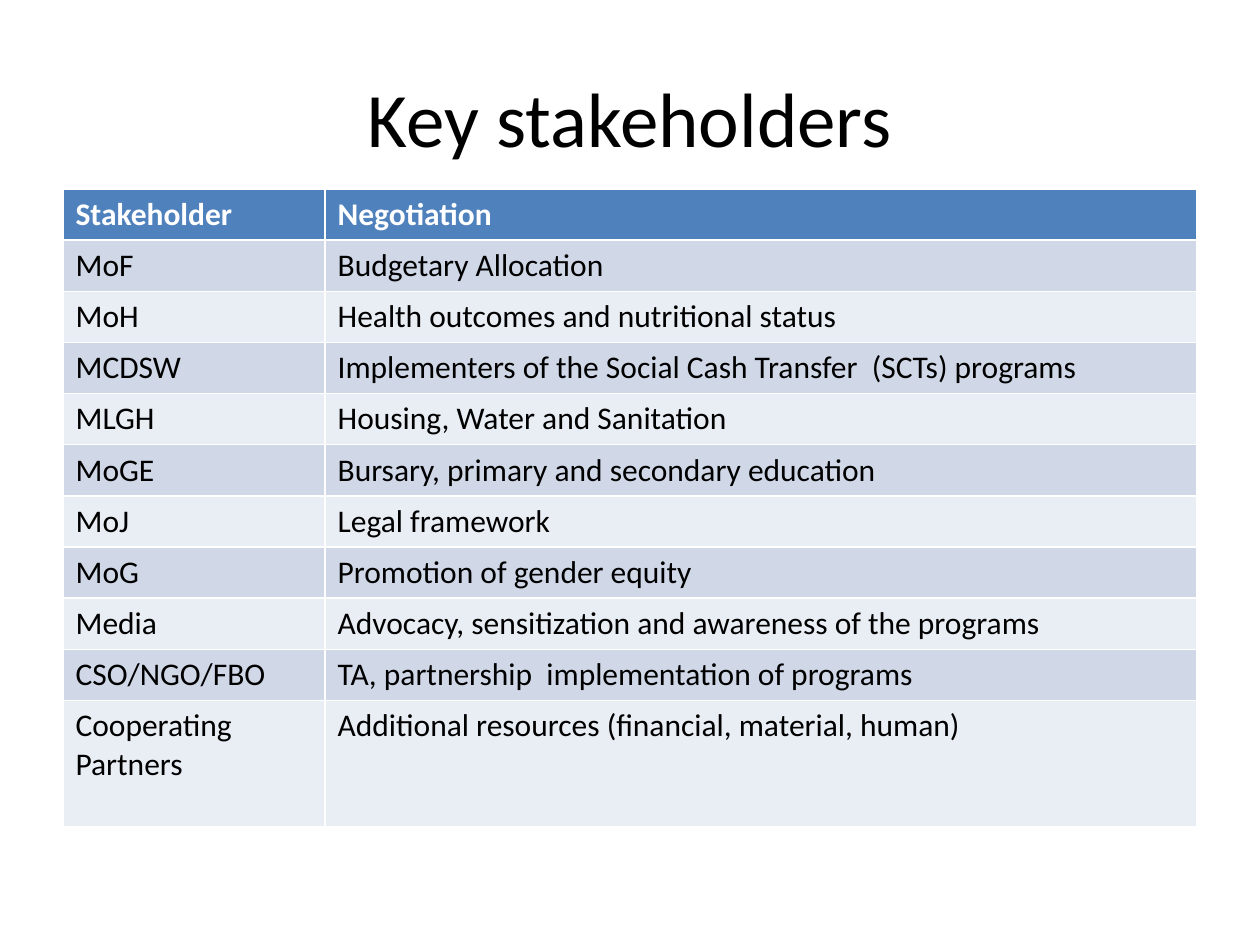
from pptx import Presentation
from pptx.dml.color import RGBColor
from pptx.enum.text import MSO_ANCHOR, PP_ALIGN
from pptx.util import Inches, Pt

CENTER, MIDDLE = PP_ALIGN.CENTER, MSO_ANCHOR.MIDDLE
WHITE = RGBColor(0xFF, 0xFF, 0xFF)
BLACK = RGBColor(0x00, 0x00, 0x00)
HEADER = RGBColor(0x4F, 0x81, 0xBD)
BANDS = [RGBColor(0xE9, 0xED, 0xF4), RGBColor(0xD0, 0xD8, 0xE8)]
FONT = "Calibri"

ROWS = [
    ("Stakeholder", "Negotiation"),
    ("MoF", "Budgetary Allocation"),
    ("MoH", "Health outcomes and nutritional status"),
    ("MCDSW", "Implementers of the Social Cash Transfer  (SCTs) programs"),
    ("MLGH", "Housing, Water and Sanitation"),
    ("MoGE", "Bursary, primary and secondary education"),
    ("MoJ", "Legal framework"),
    ("MoG", "Promotion of gender equity"),
    ("Media", "Advocacy, sensitization and awareness of the programs"),
    ("CSO/NGO/FBO", "TA, partnership  implementation of programs"),
    ("Cooperating Partners", "Additional resources (financial, material, human)"),
]


def add_run(p, text, size, color, bold=False):
    r = p.add_run()
    r.text = text
    r.font.name, r.font.size, r.font.bold = FONT, Pt(size), bold
    r.font.color.rgb = color


prs = Presentation()
prs.slide_width, prs.slide_height = Inches(10), Inches(7.5)
W, H = prs.slide_width, prs.slide_height
slide = prs.slides.add_slide(prs.slide_layouts[5])
left, width = int(W * 0.05), int(W * 0.9)

# Title
title = slide.shapes.title
title.left, title.top = left, int(H * 0.04)
title.width, title.height = width, Inches(1.25)
tf = title.text_frame
tf.vertical_anchor = MIDDLE
p = tf.paragraphs[0]
p.alignment = CENTER
add_run(p, "Key stakeholders", 44, BLACK)

# Table: equal rows, with the last one filling the remaining height
top, height, row_h = int(H * 0.2), Inches(5.06), Inches(0.406)
table = slide.shapes.add_table(len(ROWS), 2, left, top, width, height).table
table.columns[0].width = Inches(2.08)
table.columns[1].width = width - Inches(2.08)
for row in table.rows:
    row.height = row_h
table.rows[len(ROWS) - 1].height = height - row_h * (len(ROWS) - 1)

# Cells: header, then alternating bands
for i, texts in enumerate(ROWS):
    for j, text in enumerate(texts):
        cell = table.cell(i, j)
        cell.fill.solid()
        cell.fill.fore_color.rgb = BANDS[i % 2] if i else HEADER
        add_run(cell.text_frame.paragraphs[0], text, 18,
                BLACK if i else WHITE, bold=i == 0)

prs.save("out.pptx")
